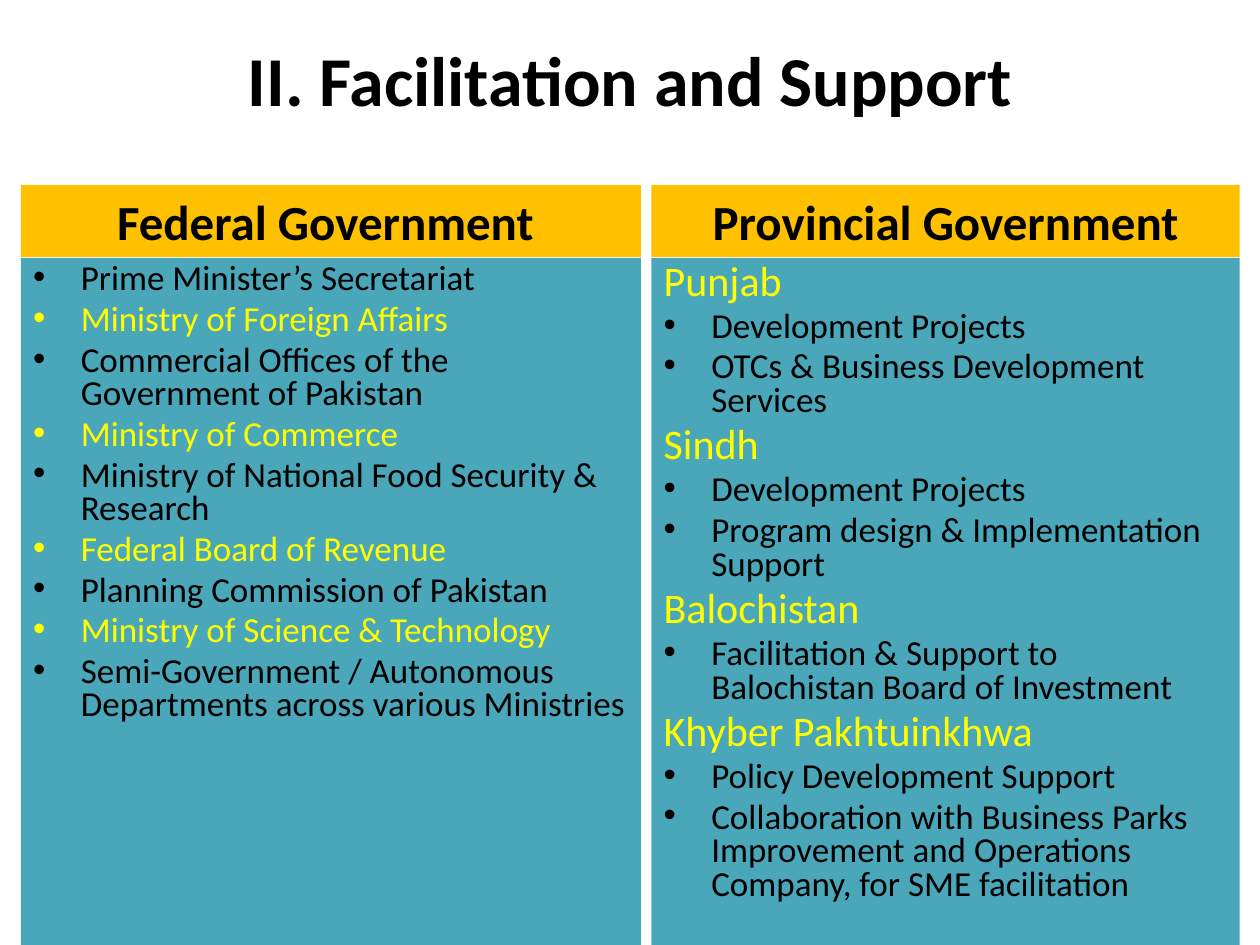
from lxml.etree import SubElement
from pptx import Presentation
from pptx.dml.color import RGBColor
from pptx.enum.text import MSO_ANCHOR, PP_ALIGN
from pptx.oxml.ns import qn
from pptx.util import Cm, Pt

BLACK, YELLOW, GOLD, TEAL = "000000", "FFFF00", "FFC000", "4AA7BA"
TITLE = "II. Facilitation and Support"
FEDERAL = [
    "Prime Minister’s Secretariat",
    "Ministry of Foreign Affairs",
    "Commercial Offices of the Government of Pakistan",
    "Ministry of Commerce",
    "Ministry of National Food Security & Research",
    "Federal Board of Revenue",
    "Planning Commission of Pakistan",
    "Ministry of Science & Technology",
    "Semi-Government / Autonomous Departments across various Ministries",
]
PROVINCES = {
    "Punjab": ["Development Projects", "OTCs & Business Development Services"],
    "Sindh": ["Development Projects", "Program design & Implementation Support"],
    "Balochistan": ["Facilitation & Support to Balochistan Board of Investment"],
    "Khyber Pakhtuinkhwa": [
        "Policy Development Support",
        "Collaboration with Business Parks Improvement and Operations Company, "
        "for SME facilitation",
    ],
}

# Each line is (text, size, colour, bulleted)
federal_lines = [(text, 20, (BLACK, YELLOW)[i % 2], True)
                 for i, text in enumerate(FEDERAL)]
provincial_lines = []
for province, items in PROVINCES.items():
    provincial_lines.append((province, 24, YELLOW, False))
    provincial_lines += [(item, 20, BLACK, True) for item in items]

# Each column is (left, width, heading, lines)
COLUMNS = [
    (0.42, 12.5, "Federal Government ", federal_lines),
    (13.13, 11.86, "Provincial Government", provincial_lines),
]
HEAD_TOP, HEAD_HEIGHT = 3.73, 1.45
BODY_TOP, SLIDE_HEIGHT = 5.2, 19.05


def color(value):
    return RGBColor.from_string(value)


def add_box(left, top, width, height, fill=None):
    s = slide.shapes.add_textbox(Cm(left), Cm(top), Cm(width), Cm(height))
    if fill:
        s.fill.solid()
        s.fill.fore_color.rgb = color(fill)
    s.text_frame.word_wrap = True
    return s.text_frame


def style(p, size, value, bold=False):
    for r in p.runs:
        r.font.name = "Calibri"
        r.font.size = Pt(size)
        r.font.bold = bold
        r.font.color.rgb = color(value)


def add_heading(tf, text, size):
    tf.text = text
    p = tf.paragraphs[0]
    p.alignment = PP_ALIGN.CENTER
    style(p, size, BLACK, bold=True)


def add_bullet(p):
    pPr = p._p.get_or_add_pPr()
    pPr.set("marL", str(Cm(0.96)))
    pPr.set("indent", str(-Cm(0.96)))
    SubElement(pPr, qn("a:buFont"), typeface="Arial")
    SubElement(pPr, qn("a:buChar"), char="•")


def add_lines(tf, lines):
    for i, (text, size, value, bulleted) in enumerate(lines):
        p = tf.add_paragraph() if i else tf.paragraphs[0]
        p.text = text
        if bulleted:
            add_bullet(p)
        p.line_spacing = 0.8
        if i:
            p.space_before = Pt(size * 0.2)
        style(p, size, value)


prs = Presentation()
prs.slide_width, prs.slide_height = Cm(25.4), Cm(SLIDE_HEIGHT)
slide = prs.slides.add_slide(prs.slide_layouts[6])

title = add_box(1.27, 0.2, 22.86, 2.75)
title.vertical_anchor = MSO_ANCHOR.MIDDLE
add_heading(title, TITLE, 40)

for left, width, heading, lines in COLUMNS:
    add_heading(add_box(left, HEAD_TOP, width, HEAD_HEIGHT, GOLD), heading, 28)
    add_lines(add_box(left, BODY_TOP, width, SLIDE_HEIGHT - BODY_TOP, TEAL), lines)

prs.save("out.pptx")
